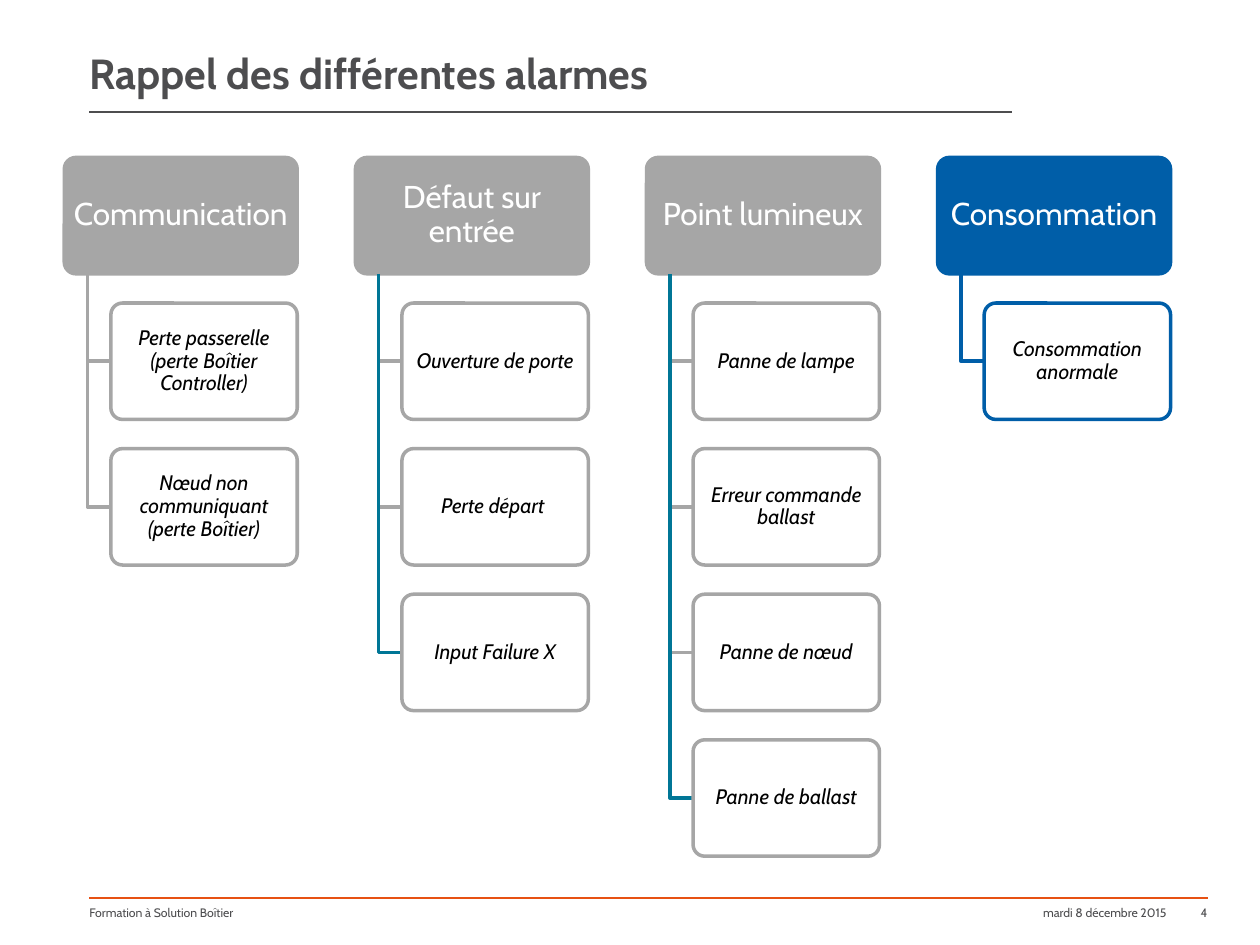
from typing import NamedTuple

from lxml import etree
from pptx import Presentation
from pptx.dml.color import RGBColor
from pptx.enum.shapes import MSO_CONNECTOR, MSO_SHAPE
from pptx.enum.text import MSO_ANCHOR, MSO_AUTO_SIZE, PP_ALIGN
from pptx.oxml.ns import qn
from pptx.util import Pt

ROUNDED = MSO_SHAPE.ROUNDED_RECTANGLE
STRAIGHT = MSO_CONNECTOR.STRAIGHT
TOP, MIDDLE, BOTTOM = MSO_ANCHOR.TOP, MSO_ANCHOR.MIDDLE, MSO_ANCHOR.BOTTOM
LEFT, CENTER, RIGHT = PP_ALIGN.LEFT, PP_ALIGN.CENTER, PP_ALIGN.RIGHT
NO_AUTOFIT = MSO_AUTO_SIZE.NONE

WHITE = RGBColor(0xFF, 0xFF, 0xFF)
BLACK = RGBColor(0x00, 0x00, 0x00)
DARK_GRAY = RGBColor(0x4D, 0x4D, 0x4F)
GRAY = RGBColor(0xA6, 0xA6, 0xA6)
BLUE = RGBColor(0x00, 0x5E, 0xA8)
TEAL = RGBColor(0x00, 0x76, 0x96)
ORANGE = RGBColor(0xE7, 0x51, 0x13)

FONT = "Cabin"
MARGIN = 51.1
COLUMN_LEFT, COLUMN_PITCH = 36.75, 166.35
ROW_TOP, ROW_PITCH = 90, 83.2
BOX_HEIGHT = 66.5
HEADER_WIDTH, ALARM_WIDTH = 133.1, 106.5
ALARM_INDENT = HEADER_WIDTH - ALARM_WIDTH
SPINE_INDENT = ALARM_INDENT / 2


class Category(NamedTuple):
    name: str
    alarms: list[str]
    color: RGBColor
    last_branch: RGBColor


class FooterText(NamedTuple):
    text: str
    left: float
    width: float
    align: PP_ALIGN


CATEGORIES = [
    Category("Communication",
             ["Perte passerelle (perte Boîtier Controller)",
              "Nœud non communiquant (perte Boîtier)"], GRAY, GRAY),
    Category("Défaut sur entrée",
             ["Ouverture de porte", "Perte départ ", "Input Failure X"], GRAY, TEAL),
    Category("Point lumineux",
             ["Panne de lampe", "Erreur commande ballast",
              "Panne de nœud", "Panne de ballast"], GRAY, TEAL),
    Category("Consommation", ["Consommation anormale"], BLUE, BLUE),
]

FOOTER = [
    FooterText("mardi 8 décembre 2015", 468, 198.6, RIGHT),
    FooterText("Formation à Solution Boîtier", MARGIN, 411, LEFT),
    FooterText("4", 666, 24, RIGHT),
]


def write_text(shape, text: str, *, size: float, color: RGBColor, align=LEFT,
               anchor=TOP, bold=False, italic=False, spacing=1.0,
               inset_x=0.0, inset_y=0.0) -> None:
    frame = shape.text_frame
    frame.word_wrap = True
    frame.auto_size = NO_AUTOFIT
    frame.vertical_anchor = anchor
    frame.margin_left = frame.margin_right = Pt(inset_x)
    frame.margin_top = frame.margin_bottom = Pt(inset_y)
    paragraph = frame.paragraphs[0]
    paragraph.alignment = align
    paragraph.line_spacing = spacing
    run = paragraph.add_run()
    run.text = text
    run.font.name = FONT
    run.font.size = Pt(size)
    run.font.bold = bold
    run.font.italic = italic
    run.font.color.rgb = color


def add_rule(slide, y: float, right: float, color: RGBColor) -> None:
    rule = slide.shapes.add_connector(STRAIGHT, Pt(MARGIN), Pt(y), Pt(right), Pt(y))
    rule.line.color.rgb = color
    rule.line.width = Pt(0.75)
    etree.SubElement(rule.element.spPr, qn("a:effectLst"))


def add_box(slide, left: float, top: float, width: float,
            fill: RGBColor, outline: RGBColor):
    box = slide.shapes.add_shape(ROUNDED, Pt(left), Pt(top), Pt(width), Pt(BOX_HEIGHT))
    box.adjustments[0] = 0.1
    box.shadow.inherit = False
    box.fill.solid()
    box.fill.fore_color.rgb = fill
    box.line.color.rgb = outline
    box.line.width = Pt(2)
    return box


def add_branch(slide, left: float, top: float, right: float, bottom: float,
               color: RGBColor) -> None:
    builder = slide.shapes.build_freeform(Pt(left), Pt(top))
    builder.add_line_segments([(Pt(left), Pt(bottom)), (Pt(right), Pt(bottom))],
                              close=False)
    branch = builder.convert_to_shape()
    branch.shadow.inherit = False
    branch.fill.background()
    branch.line.color.rgb = color
    branch.line.width = Pt(2)


def add_category(slide, category: Category, left: float) -> None:
    header = add_box(slide, left, ROW_TOP, HEADER_WIDTH, category.color, category.color)
    write_text(header, category.name, size=18, color=WHITE, align=CENTER,
               anchor=MIDDLE, spacing=0.9, inset_x=3, inset_y=2)
    alarm_left = left + ALARM_INDENT
    for row, alarm in enumerate(category.alarms, start=1):
        top = ROW_TOP + row * ROW_PITCH
        is_last = row == len(category.alarms)
        add_branch(slide, left + SPINE_INDENT, ROW_TOP + BOX_HEIGHT, alarm_left,
                   top + BOX_HEIGHT / 2,
                   category.last_branch if is_last else category.color)
        box = add_box(slide, alarm_left, top, ALARM_WIDTH, WHITE, category.color)
        white = box.element.spPr.find(qn("a:solidFill")).find(qn("a:srgbClr"))
        etree.SubElement(white, qn("a:alpha"), val="90000")
        write_text(box, alarm, size=12, color=BLACK, align=CENTER, anchor=MIDDLE,
                   italic=True, spacing=0.9, inset_x=2.4, inset_y=1.6)


def main() -> None:
    presentation = Presentation()
    presentation.slide_width = Pt(720)
    presentation.slide_height = Pt(540)
    slide = presentation.slides.add_slide(presentation.slide_layouts[5])

    add_rule(slide, 64, 578.2, DARK_GRAY)
    add_rule(slide, 513.2, 690.2, ORANGE)

    title = slide.shapes.title
    title.left, title.top, title.width, title.height = Pt(MARGIN), Pt(0), Pt(527), Pt(56.2)
    write_text(title, "Rappel des différentes alarmes", size=24, color=DARK_GRAY,
               anchor=BOTTOM, bold=True)

    for item in FOOTER:
        box = slide.shapes.add_textbox(Pt(item.left), Pt(517), Pt(item.width), Pt(23))
        write_text(box, item.text, size=7, color=DARK_GRAY, align=item.align)

    for column, category in enumerate(CATEGORIES):
        add_category(slide, category, COLUMN_LEFT + column * COLUMN_PITCH)

    presentation.save("out.pptx")


if __name__ == "__main__":
    main()
